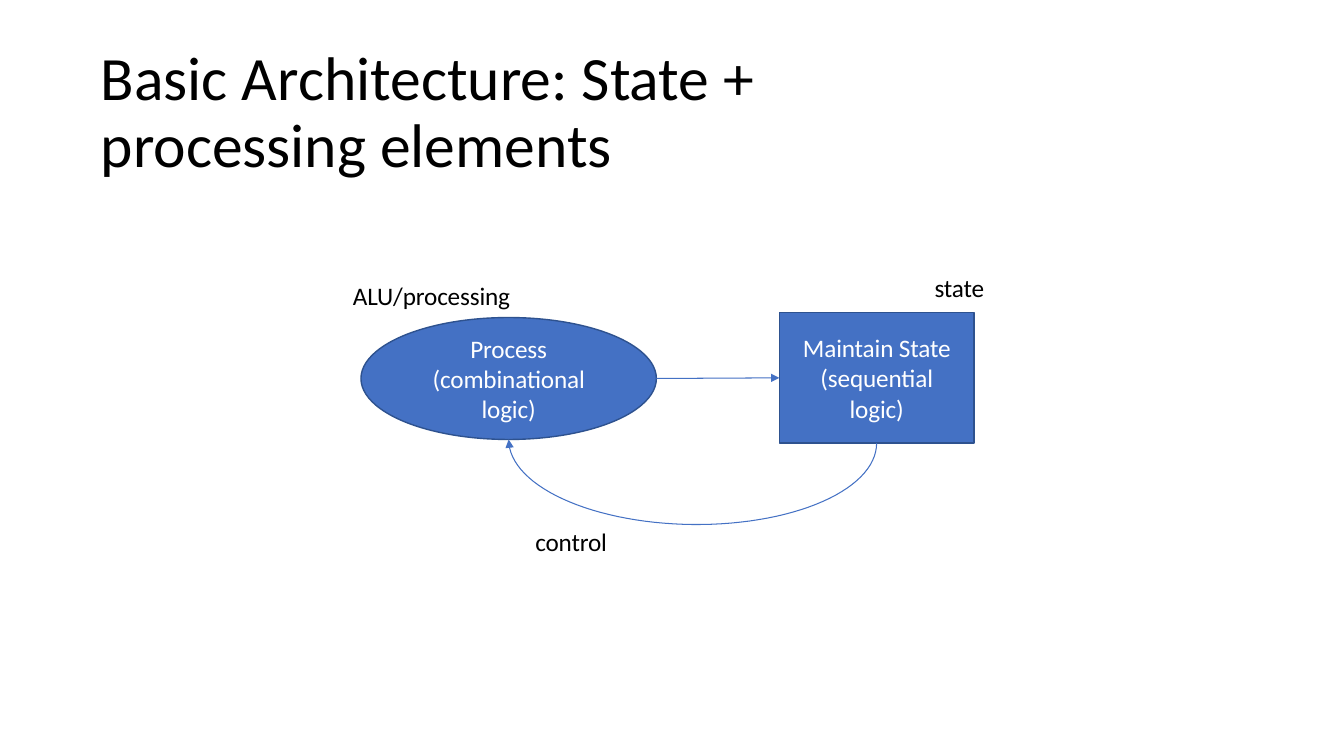
import math

import pptx
import pptx.dml.color
import pptx.enum.shapes
import pptx.enum.text
import pptx.oxml
import pptx.oxml.ns
import pptx.util

WIDTH = pptx.util.Inches(13.33)
HEIGHT = pptx.util.Inches(7.5)
BLUE, EDGE, BLACK, WHITE = "4471C4", "2E528F", "000000", "FFFFFF"
KINDS = pptx.enum.shapes.MSO_SHAPE
ALIGN = pptx.enum.text.PP_ALIGN
ANCHOR = pptx.enum.text.MSO_ANCHOR


def colour(hex_text):
    """Turn a hex string into a colour."""
    return pptx.dml.color.RGBColor.from_string(hex_text)


def place(left, top, width, height):
    """Turn percentages of the slide into a position and a size."""
    shares = (left, WIDTH), (top, HEIGHT), (width, WIDTH), (height, HEIGHT)
    return [round(share * whole / 100) for share, whole in shares]


def apply(target, values):
    """Set each named attribute of an object."""
    for name, value in values.items():
        setattr(target, name, value)


def write(shape, text, size, ink, frame, para):
    """Fill a shape with one formatted paragraph."""
    margins = dict.fromkeys(("margin_left", "margin_top", "margin_right", "margin_bottom"), 0)
    apply(shape.text_frame, {**margins, **frame})
    line = shape.text_frame.paragraphs[0]
    apply(line, para)
    span = line.add_run()
    span.text = text
    apply(span.font, {"name": "Calibri", "size": pptx.util.Pt(size)})
    span.font.color.rgb = colour(ink)
    return span


def add_title(page, text):
    """Move and format the title placeholder."""
    title = page.shapes.title
    apply(title, dict(zip(("left", "top", "width", "height"), place(7.5, 4.53, 69.02, 18.93))))
    frame = {
        "margin_top": pptx.util.Inches(0.12),
        "margin_right": pptx.util.Inches(0.2),
        "vertical_anchor": ANCHOR.TOP,
        "auto_size": pptx.enum.text.MSO_AUTO_SIZE.NONE,
        "word_wrap": True,
    }
    para = {"alignment": ALIGN.LEFT, "line_spacing": pptx.util.Pt(47.5)}
    write(title, text, 44, BLACK, frame, para)


def add_label(page, text, area):
    """Add a small black caption."""
    box = page.shapes.add_textbox(*place(*area))
    frame = {"margin_top": pptx.util.Inches(0.02), "word_wrap": False}
    span = write(box, text, 18, BLACK, frame, {"alignment": ALIGN.LEFT})
    span.font._element.set("spc", "-10")


def add_node(page, kind, text, area, side):
    """Add a blue block with centred white text."""
    node = page.shapes.add_shape(kind, *place(*area))
    node.shadow.inherit = False
    node.fill.solid()
    node.fill.fore_color.rgb = colour(BLUE)
    node.line.color.rgb = colour(EDGE)
    node.line.width = pptx.util.Pt(1)
    frame = {
        "margin_left": pptx.util.Inches(side),
        "margin_right": pptx.util.Inches(side),
        "vertical_anchor": ANCHOR.MIDDLE,
        "word_wrap": True,
    }
    span = write(node, text, 18, WHITE, frame, {"alignment": ALIGN.CENTER})
    span.font._element.set("spc", "-10")
    return node


def style_arrow(arrow):
    """Give a line its colour, width and arrowhead."""
    arrow.line.color.rgb = colour(BLUE)
    arrow.line.width = pptx.util.Pt(0.75)
    head = pptx.oxml.parse_xml(f'<a:tailEnd {pptx.oxml.ns.nsdecls("a")} type="triangle"/>')
    arrow.line._get_or_add_ln().append(head)


def add_straight_arrow(page, source, target):
    """Join the right side of one block to the left side of a rectangle."""
    arrow = page.shapes.add_connector(
        pptx.enum.shapes.MSO_CONNECTOR.STRAIGHT,
        source.left + source.width,
        source.top + source.height // 2,
        target.left,
        target.top + target.height // 2,
    )
    arrow.end_connect(target, 1)
    style_arrow(arrow)
    effects = pptx.oxml.parse_xml(f'<a:effectLst {pptx.oxml.ns.nsdecls("a")}/>')
    arrow._element.spPr.append(effects)


def add_return_arrow(page, source, target, depth, steps=60):
    """Swing a half ellipse from the bottom of one block to another."""
    start_x, end_x = (node.left + node.width // 2 for node in (source, target))
    start_y, end_y = (node.top + node.height for node in (source, target))
    points = []
    for step in range(steps + 1):
        angle = math.pi * step / steps
        share = (1 - math.cos(angle)) / 2
        sag = HEIGHT * depth / 100 * math.sin(angle)
        points.append((
            round(start_x + (end_x - start_x) * share),
            round(start_y + (end_y - start_y) * share + sag),
        ))
    builder = page.shapes.build_freeform(*points[0])
    builder.add_line_segments(points[1:], close=False)
    curve = builder.convert_to_shape()
    curve.shadow.inherit = False
    curve.fill.background()
    style_arrow(curve)


def main():
    """Build the slide and save it."""
    deck = pptx.Presentation()
    apply(deck, {"slide_width": WIDTH, "slide_height": HEIGHT})
    page = deck.slides.add_slide(deck.slide_layouts[5])
    add_title(page, "Basic Architecture: State + processing elements")
    state = add_node(page, KINDS.RECTANGLE, "Maintain State (sequential logic)",
                     (57.99, 41.33, 14.48, 17.3), 0.2)
    process = add_node(page, KINDS.OVAL, "Process (combinational logic)",
                       (26.86, 42, 21.98, 16.13), 0.2)
    add_straight_arrow(page, process, state)
    add_return_arrow(page, state, process, 11)
    add_label(page, "control", (39.83, 69.33, 5.63, 4.4))
    add_label(page, "ALU/processing", (26.26, 36.8, 12.08, 4.4))
    add_label(page, "state", (69.54, 35.73, 3.98, 4.4))
    deck.save("out.pptx")


if __name__ == "__main__":
    main()
